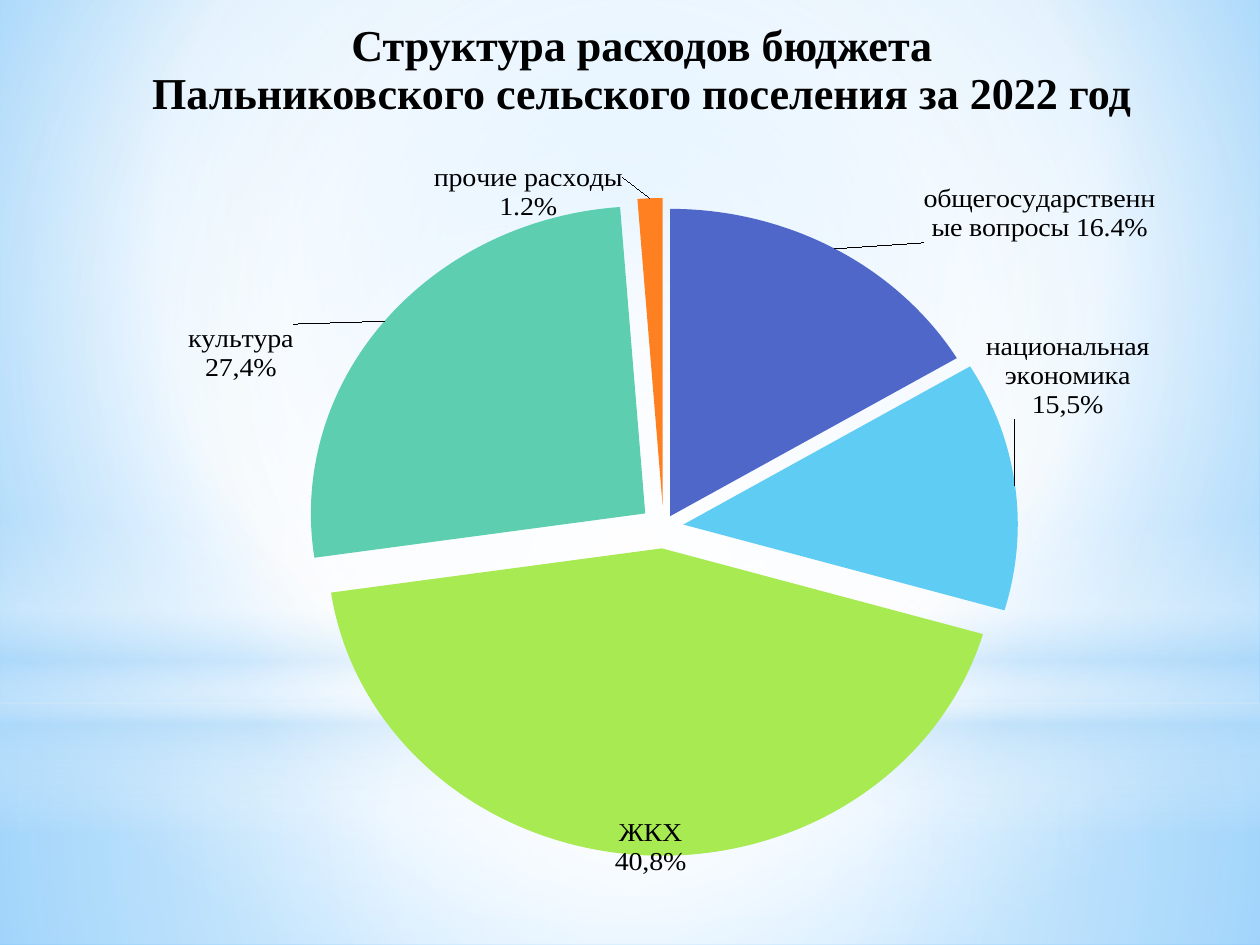
from dataclasses import dataclass
from typing import Optional

from lxml.etree import SubElement
from pptx import Presentation
from pptx.chart.data import CategoryChartData
from pptx.dml.color import RGBColor
from pptx.enum.chart import XL_CHART_TYPE, XL_LABEL_POSITION
from pptx.enum.shapes import MSO_SHAPE
from pptx.enum.text import MSO_ANCHOR, PP_ALIGN
from pptx.oxml.ns import qn
from pptx.util import Inches, Pt


@dataclass(frozen=True)
class Theme:
    text: RGBColor = RGBColor(0, 0, 0)
    white: str = "FFFFFF"
    pale: str = "B4DCFA"
    title_font: str = "Times New Roman"
    chart_font: str = "Karla"
    title_size: float = 25.2
    chart_size: float = 18
    label_size: float = 16


@dataclass(frozen=True)
class Stop:
    position: int
    color: str
    opacity: int = 100


@dataclass(frozen=True)
class Gradient:
    stops: tuple[Stop, ...]
    focus: Optional[tuple[int, int, int, int]] = (50, 50, 50, 50)
    angle: int = 0


@dataclass(frozen=True)
class Glow:
    preset: MSO_SHAPE
    top: float
    height: float
    gradient: Gradient


@dataclass(frozen=True)
class Expense:
    name: str
    share: float
    color: str
    explosion: int
    label_shift: tuple[float, float]
    lines: tuple[str, ...] = ()


THEME = Theme()
WHITE, PALE = THEME.white, THEME.pale
BACKDROP = Gradient(
    (Stop(0, "9ED5FF"), Stop(60, WHITE), Stop(100, "5BB9FF")), (20, 10, 20, 60))
GLOWS = (
    Glow(MSO_SHAPE.RECTANGLE, 5.58, 1.92, Gradient(
        (Stop(0, WHITE, 91), Stop(37, WHITE, 76), Stop(100, PALE, 79)))),
    Glow(MSO_SHAPE.RECTANGLE, 0, 5.58, Gradient(
        (Stop(0, WHITE, 89), Stop(48, WHITE, 62), Stop(100, PALE, 79)))),
    Glow(MSO_SHAPE.RECTANGLE, 4.12, 2.5, Gradient(
        (Stop(0, WHITE, 0), Stop(29, WHITE, 30), Stop(45, PALE, 40),
         Stop(55, WHITE, 26), Stop(65, PALE, 60), Stop(100, WHITE, 0)),
        None, 90)),
    Glow(MSO_SHAPE.OVAL, 1.75, 5.58, Gradient(
        (Stop(0, WHITE), Stop(56, WHITE, 0)))),
)
TITLE = ("Структура расходов бюджета",
         "Пальниковского сельского поселения за 2022 год")
EXPENSES = (
    Expense("общегосударственные вопросы", 0.164, "4E67C8", 4, (0.07, 0)),
    Expense("национальная экономика", 0.131, "5ECCF3", 6, (-0.03, -0.09),
            ("национальная экономика", "15,5%")),
    Expense("ЖКХ", 0.432, "A7EA52", 7, (0.01, -0.06), ("ЖКХ", "40,8%")),
    Expense("культура", 0.261, "5DCEAF", 7, (-0.07, 0.09), ("культура", "27,4%")),
    Expense("прочие расходы", 0.012, "FF8021", 7, (-0.1, -0.02)),
)
PLOT_AREA = {"x": 0.25, "y": 0.065, "w": 0.55, "h": 0.875}


def write_gradient(element, gradient: Gradient) -> None:
    element[:] = []
    stops = SubElement(element, qn("a:gsLst"))
    for stop in gradient.stops:
        item = SubElement(stops, qn("a:gs"), pos=str(stop.position * 1000))
        color = SubElement(item, qn("a:srgbClr"), val=stop.color)
        if stop.opacity < 100:
            SubElement(color, qn("a:alpha"), val=str(stop.opacity * 1000))
    if gradient.focus:
        radial = SubElement(element, qn("a:path"))
        radial.set("path", "circle")
        sides = {side: str(value * 1000) for side, value in zip("ltrb", gradient.focus)}
        SubElement(radial, qn("a:fillToRect"), **sides)
    else:
        SubElement(element, qn("a:lin"), ang=str(gradient.angle * 60000), scaled="0")


def add_backdrop(slide) -> None:
    slide.background.fill.gradient()
    write_gradient(slide._element.xpath(".//p:bgPr/a:gradFill")[0], BACKDROP)


def add_glow(slide, glow: Glow) -> None:
    shape = slide.shapes.add_shape(
        glow.preset, Inches(0), Inches(glow.top), Inches(10), Inches(glow.height))
    shape.shadow.inherit = False
    shape.line.fill.background()
    shape.fill.gradient()
    write_gradient(shape._element.xpath("./p:spPr/a:gradFill")[0], glow.gradient)


def style_font(font, name: str, size: float, bold: bool = False) -> None:
    font.name, font.size, font.bold = name, Pt(size), bold
    font.color.rgb = THEME.text


def add_title(slide) -> None:
    shape = slide.shapes.add_textbox(
        Inches(0.35), Inches(0.13), Inches(9.49), Inches(0.87))
    frame = shape.text_frame
    frame.word_wrap = True
    frame.vertical_anchor = MSO_ANCHOR.MIDDLE
    for index, line in enumerate(TITLE):
        paragraph = frame.add_paragraph() if index else frame.paragraphs[0]
        paragraph.alignment = PP_ALIGN.CENTER
        paragraph.line_spacing = 0.9
        run = paragraph.add_run()
        run.text = line
        style_font(run.font, THEME.title_font, THEME.title_size, True)


def write_layout(layout, values: dict[str, float], inner: bool = False) -> None:
    layout[:] = []
    manual = SubElement(layout, qn("c:manualLayout"))
    if inner:
        SubElement(manual, qn("c:layoutTarget"), val="inner")
        for axis in "xy":
            SubElement(manual, qn(f"c:{axis}Mode"), val="edge")
    for key, value in values.items():
        SubElement(manual, qn(f"c:{key}"), val=str(value))


def style_slice(series, index: int, expense: Expense) -> None:
    point = series.points[index]
    point.format.fill.solid()
    point.format.fill.fore_color.rgb = RGBColor.from_string(expense.color)
    point.format.line.fill.background()
    slice_element = series._element.xpath(f"./c:dPt[c:idx/@val='{index}']")[0]
    explosion = SubElement(slice_element, qn("c:explosion"), val=str(expense.explosion))
    slice_element.find(qn("c:idx")).addnext(explosion)

    label = point.data_label
    if expense.lines:
        for number, line in enumerate(expense.lines):
            frame = label.text_frame
            paragraph = frame.add_paragraph() if number else frame.paragraphs[0]
            run = paragraph.add_run()
            run.text = line
            style_font(run.font, THEME.title_font, THEME.label_size)
    else:
        style_font(label.font, THEME.title_font, THEME.label_size)
    label.position = XL_LABEL_POSITION.OUTSIDE_END
    element = series._element.xpath(f".//c:dLbl[c:idx/@val='{index}']")[0]
    layout = SubElement(element, qn("c:layout"))
    element.find(qn("c:idx")).addnext(layout)
    write_layout(layout, dict(zip("xy", expense.label_shift)))
    element.find(qn("c:showCatName")).set("val", "1")
    separator = SubElement(element, qn("c:separator"))
    separator.text = " "


def add_expense_chart(slide) -> None:
    data = CategoryChartData(number_format="0.0%")
    data.categories = [expense.name for expense in EXPENSES]
    data.add_series("Series 1", [expense.share for expense in EXPENSES])
    chart = slide.shapes.add_chart(
        XL_CHART_TYPE.PIE, Inches(0.2), Inches(1.06), Inches(9.65), Inches(6.24), data).chart
    chart.has_title = False
    chart.has_legend = False
    style_font(chart.font, THEME.chart_font, THEME.chart_size)
    plot = chart.plots[0]
    plot.vary_by_categories = True
    series = plot.series[0]
    labels = series.data_labels
    labels.show_value = labels.show_category_name = True
    labels.number_format = "0.0%"
    labels.number_format_is_linked = False
    labels.position = XL_LABEL_POSITION.OUTSIDE_END
    style_font(labels.font, THEME.title_font, THEME.label_size)
    for index, expense in enumerate(EXPENSES):
        style_slice(series, index, expense)
    area = chart._chartSpace.xpath(".//c:plotArea")[0]
    layout = area.find(qn("c:layout"))
    if layout is None:
        layout = SubElement(area, qn("c:layout"))
        area.insert(0, layout)
    write_layout(layout, PLOT_AREA, True)


def main() -> None:
    presentation = Presentation()
    presentation.slide_width, presentation.slide_height = Inches(10), Inches(7.5)
    slide = presentation.slides.add_slide(presentation.slide_layouts[6])
    add_backdrop(slide)
    for glow in GLOWS:
        add_glow(slide, glow)
    add_title(slide)
    add_expense_chart(slide)
    presentation.save("out.pptx")


if __name__ == "__main__":
    main()
